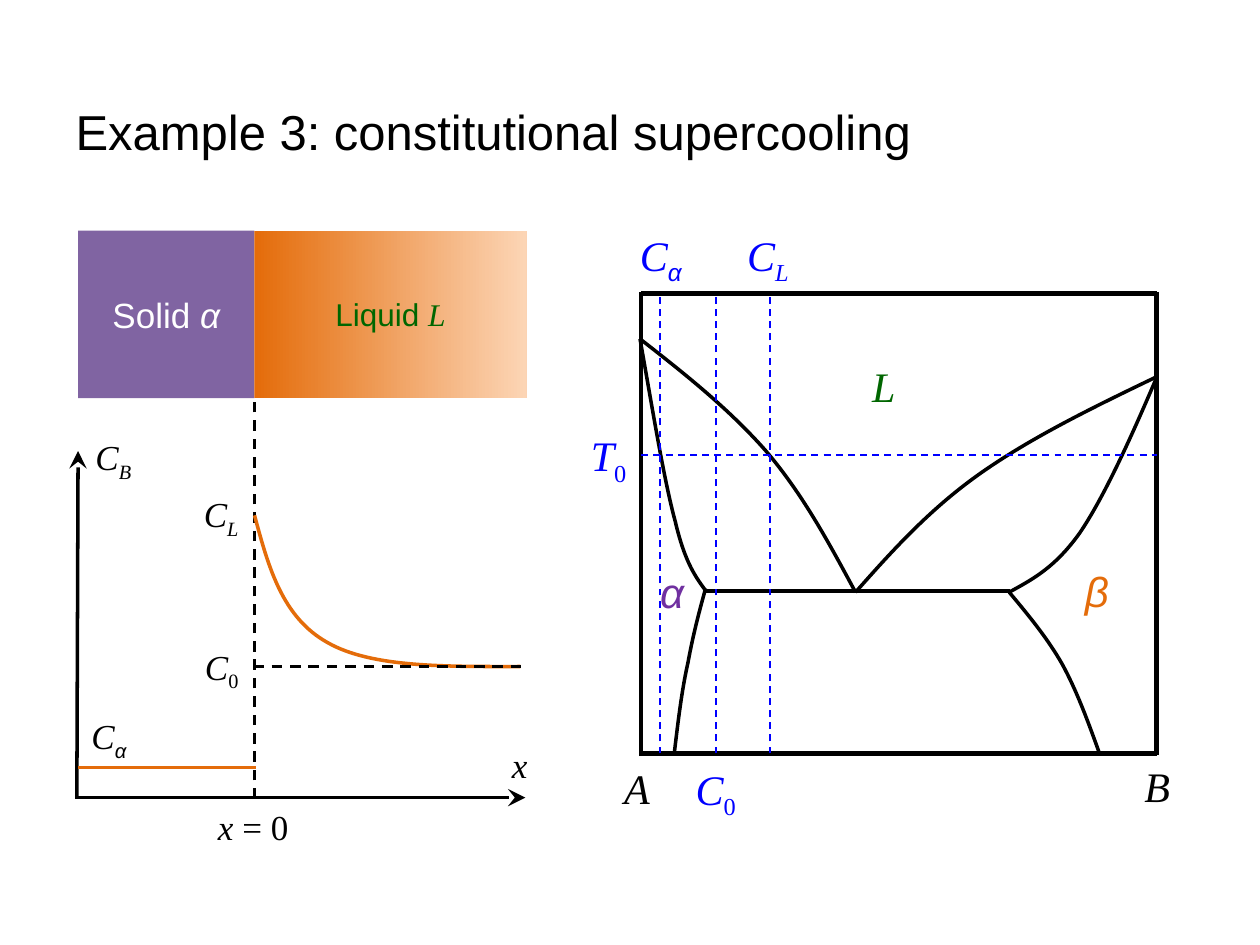
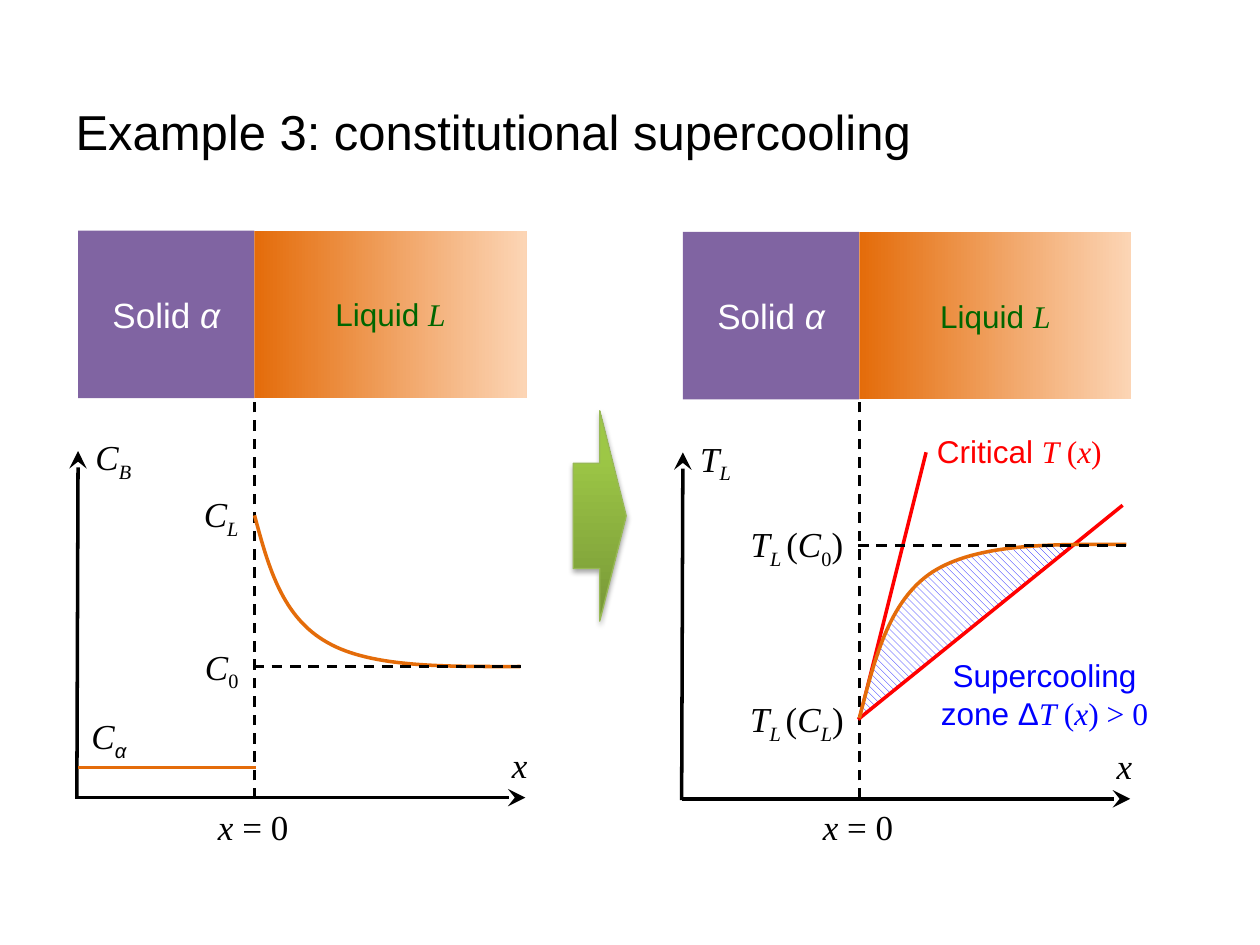
from lxml import etree
from pptx import Presentation
from pptx.dml.color import RGBColor
from pptx.enum.dml import MSO_LINE as Dash, MSO_PATTERN as Hatch
from pptx.enum.shapes import MSO_CONNECTOR as Link, MSO_SHAPE as Kind
from pptx.enum.text import MSO_ANCHOR as Anchor, MSO_AUTO_SIZE as Fit, PP_ALIGN as Align
from pptx.oxml import parse_xml
from pptx.oxml.ns import qn
from pptx.util import Cm, Pt

UNIT = 2.54  # one grid unit in centimetres
SANS, SERIF = "Arial", "Times New Roman"
BLACK, WHITE, BLUE, RED = "000000", "FFFFFF", "0000FF", "FF0000"
ORANGE, PEACH, PURPLE, VIOLET, GREEN = "E46C0A", "FCD5B5", "8064A2", "7030A0", "006600"
TITLE = "Example 3: constitutional supercooling"
SHIFT = 4.8  # from the left panel to the right one
SHADOW = (
    '<a:effectLst xmlns:a="http://schemas.openxmlformats.org/drawingml/2006/main">'
    '<a:outerShdw blurRad="39370" dist="22860" dir="5400000" rotWithShape="0">'
    '<a:srgbClr val="000000"><a:alpha val="35000"/></a:srgbClr>'
    '</a:outerShdw></a:effectLst>')


def rgb(code):
    return RGBColor.from_string(code)


def grid(*vals):
    return [Cm(val * UNIT) for val in vals]


# Text: a run is (text, marks); i = italic, s = subscript, a = sans
def write(frame, runs, size, color, align=Align.CENTER):
    par = frame.paragraphs[0]
    par.alignment = align
    for text, marks in runs:
        run = par.add_run()
        run.text = text
        look = {"name": SANS if "a" in marks else SERIF,
                "size": Pt(size), "italic": "i" in marks}
        for key, val in look.items():
            setattr(run.font, key, val)
        run.font.color.rgb = rgb(color)
        if "s" in marks:
            run._r.get_or_add_rPr().set("baseline", "-25000")


def sub(base, low):
    marks = "s" if low.isdigit() else "isa" if low == "α" else "is"
    return [(base, "i"), (low, marks)]


def label(slide, box, runs, size=20, color=BLACK, wrap=False):
    frame = slide.shapes.add_textbox(*grid(*box)).text_frame
    frame.word_wrap = wrap
    frame.auto_size = Fit.SHAPE_TO_FIT_TEXT
    write(frame, runs, size, color)


# Lines and curves
def pen(line, color, width, dash=False):
    line.color.rgb = rgb(color)
    line.width = Pt(width)
    if dash:
        line.dash_style = Dash.DASH


def rule(slide, ends, color=BLACK, width=2, dash=False, arrow=False):
    link = slide.shapes.add_connector(Link.STRAIGHT, *grid(*ends))
    pen(link.line, color, width, dash)
    if arrow:
        tip = etree.SubElement(link.line._get_or_add_ln(), qn("a:tailEnd"))
        for key, val in {"type": "stealth", "w": "lg", "len": "lg"}.items():
            tip.set(key, val)
    etree.SubElement(link._element.spPr, qn("a:effectLst"))


def trace(slide, knots):
    """Joined cubic curves: a start, then three knots each."""
    first, *rest = [grid(*knot) for knot in knots]
    path = slide.shapes.build_freeform(*first)
    path.add_line_segments(rest, close=False)
    form = path.convert_to_shape()
    form.shadow.inherit = False
    steps = list(form._element.iter(qn("a:lnTo")))
    for k in range(0, len(steps), 3):
        cubic = etree.Element(qn("a:cubicBezTo"))
        steps[k].addprevious(cubic)
        for step in steps[k:k + 3]:
            cubic.append(step[0])
            step.getparent().remove(step)
    return form


def curve(slide, knots, color=BLACK):
    form = trace(slide, knots)
    form.fill.background()
    pen(form.line, color, 2)


# Filled shapes
def blend(fill, start, end, angle, stop=1.0):
    fill.gradient()
    fill.gradient_angle = angle
    for mark, color, pos in zip(fill.gradient_stops, (start, end), (0, stop)):
        mark.color.rgb = rgb(color)
        mark.position = pos


def block(slide, box, runs, size, color):
    rect = slide.shapes.add_shape(Kind.RECTANGLE, *grid(*box))
    rect.shadow.inherit = False
    rect.line.fill.background()
    rect.text_frame.vertical_anchor = Anchor.MIDDLE
    write(rect.text_frame, runs, size, color)
    return rect.fill


# Parts shared by the slides
def begin(deck):
    slide = deck.slides.add_slide(deck.slide_layouts[5])
    head = slide.shapes.title
    head.left, head.top, head.width, head.height = grid(0.5, 0.5, 8.92, 1.08)
    head.text_frame.vertical_anchor = Anchor.MIDDLE
    head.text_frame.auto_size = Fit.NONE
    write(head.text_frame, [(TITLE, "a")], 28, BLACK, Align.LEFT)
    return slide


def panel(slide, name, wide, dx=0, dy=0):
    """Solid and liquid blocks above a pair of axes."""
    left, mid, top, base = 0.62 + dx, 2.02 + dx, 1.83 + dy, 6.33 + dy
    fill = block(slide, (left, top, 1.4, 1.33), [("Solid ", "a"), ("α", "ai")], 20, WHITE)
    fill.solid()
    fill.fore_color.rgb = rgb(PURPLE)
    fill = block(slide, (mid, top, 2.16, 1.33), [("Liquid ", "a"), ("L", "i")], 18, GREEN)
    blend(fill, ORANGE, PEACH, 0)
    rule(slide, (left - 0.01, base + 0.01, left, 3.58 + dy), arrow=True)
    rule(slide, (left - 0.01, base, 4.17 + dx, base), arrow=True)
    rule(slide, (mid, 6.34, mid, 3.17), width=1.5, dash=True)
    label(slide, (3.96 + dx, 5.85 + dy, 0.33, 0.44), [("x", "i")])
    label(slide, (0.65 + dx, 3.41 + dy, wide, 0.44), name)
    label(slide, (1.63 + dx, 6.34, 0.76, 0.44), [("x", "i"), (" = 0", "")])


def profile(slide):
    """Solute content against distance."""
    panel(slide, sub("C", "B"), 0.5)
    rule(slide, (0.62, 6.09, 2.03, 6.09), ORANGE)
    curve(slide, [(2.02, 4.09), (2.13, 4.5), (2.24, 4.9), (2.6, 5.1),
                  (2.95, 5.3), (3.54, 5.29), (4.13, 5.29)], ORANGE)
    rule(slide, (2.01, 5.29, 4.14, 5.29), width=1.5, dash=True)
    for low, x, y, wide in (("α", 0.61, 5.62, 0.51), ("L", 1.51, 3.86, 0.49),
                            ("0", 1.52, 5.07, 0.48)):
        label(slide, (x, y, wide, 0.44), sub("C", low))


def phases(slide):
    """Phase diagram of A and B."""
    left, right, top, base, flat = 5.09, 9.18, 2.33, 5.98, 4.69
    for ends in ((left, base + 0.02, left, top - 0.01), (left, base, right, base),
                 (right, top, left, top), (right, top - 0.01, right, base + 0.01)):
        rule(slide, ends, width=2.5)
    rule(slide, (5.6, flat, 8.02, flat))
    for knots in (
        [(5.61, 4.7), (5.53, 4.59), (5.44, 4.48), (5.36, 4.14),
         (5.27, 3.81), (5.18, 3.25), (5.08, 2.69)],
        [(5.6, 4.67), (5.55, 4.85), (5.5, 5.04), (5.46, 5.26),
         (5.41, 5.48), (5.38, 5.74), (5.35, 5.99)],
        [(8.01, 4.7), (8.19, 4.6), (8.37, 4.51), (8.57, 4.23),
         (8.76, 3.95), (8.97, 3.49), (9.17, 3.02)],
        [(8.01, 4.7), (8.16, 4.88), (8.31, 5.06), (8.43, 5.27),
         (8.55, 5.49), (8.64, 5.74), (8.73, 5.99)],
        [(5.08, 2.69), (5.44, 2.97), (5.79, 3.25), (6.08, 3.58),
         (6.37, 3.92), (6.58, 4.31), (6.79, 4.7)],
        [(9.18, 2.99), (8.68, 3.23), (8.19, 3.47), (7.79, 3.75),
         (7.39, 4.03), (7.09, 4.36), (6.79, 4.7)],
    ):
        curve(slide, knots)
    # Guides and names
    for x in (5.24, 5.68, 6.11):
        rule(slide, (x, base, x, top - 0.01), BLUE, 1, True)
    rule(slide, (left, 3.61, right, 3.61), BLUE, 1, True)
    for runs, x, y, wide, color in (
        ([("A", "i")], 4.85, 6, 0.41, BLACK),
        ([("B", "i")], 8.98, 5.99, 0.41, BLACK),
        ([("L", "i")], 6.82, 2.81, 0.39, GREEN),
        ([("α", "ai")], 5.13, 4.45, 0.41, VIOLET),
        ([("β", "ai")], 8.51, 4.44, 0.39, ORANGE),
        (sub("C", "0"), 5.41, 6.01, 0.54, BLUE),
        (sub("C", "α"), 4.96, 1.77, 0.57, BLUE),
        (sub("C", "L"), 5.82, 1.77, 0.55, BLUE),
        (sub("T", "0"), 4.58, 3.36, 0.5, BLUE),
    ):
        label(slide, (x, y, wide, 0.5), runs, 24, color)


def arrow(slide):
    """Block arrow between the panels."""
    form = slide.shapes.add_shape(Kind.RIGHT_ARROW, *grid(4.55, 3.26, 0.42, 1.67))
    blend(form.fill, "779737", "9DC746", 90, 0.8)
    pen(form.line, "98B955", 0.75)
    form._element.spPr.append(parse_xml(SHADOW))


def cooling(slide):
    """Liquidus temperature against distance."""
    panel(slide, sub("T", "L"), 0.46, SHIFT, 0.01)
    for low, y in (("0", 4.1), ("L", 5.49)):
        runs = sub("T", "L ") + [("(", "")] + sub("C", low) + [(")", "")]
        label(slide, (5.84, y, 0.97, 0.44), runs)
    temp = [("T ", "i"), ("(", ""), ("x", "i")]
    rule(slide, (6.82, 5.71, 7.35, 3.59), RED)
    label(slide, (7.27, 3.38, 1.64, 0.4),
          [("Critical ", "a"), *temp, (")", "")], 18, RED, True)
    zone = trace(slide, [
        (6.83, 5.71), (6.88, 5.51), (6.92, 5.3), (6.99, 5.13),
        (7.06, 4.96), (7.14, 4.81), (7.25, 4.69), (7.35, 4.58),
        (7.46, 4.51), (7.62, 4.45), (7.78, 4.39), (8.06, 4.36),
        (8.21, 4.34), (8.35, 4.33), (8.43, 4.33), (8.51, 4.34)])
    zone.line.fill.background()
    zone.fill.patterned()
    zone.fill.pattern = Hatch.WIDE_DOWNWARD_DIAGONAL
    zone.fill.fore_color.rgb = rgb(BLUE)
    zone.fill.back_color.rgb = rgb(WHITE)
    rule(slide, (6.81, 5.71, 8.91, 4.01), RED)
    label(slide, (7.34, 5.16, 1.9, 0.71),
          [("Supercooling zone Δ", "a"), *temp, (") > 0", "")], 18, BLUE, True)
    curve(slide, [(6.82, 5.7), (6.94, 5.24), (7.05, 4.77), (7.4, 4.54),
                  (7.76, 4.31), (8.35, 4.32), (8.94, 4.32)], ORANGE)
    rule(slide, (6.81, 4.33, 8.94, 4.33), width=1.5, dash=True)


def main():
    deck = Presentation()
    deck.slide_width, deck.slide_height = grid(10, 7.5)
    for parts in ((phases, profile), (profile, arrow, cooling)):
        slide = begin(deck)
        for part in parts:
            part(slide)
    deck.save("out.pptx")


if __name__ == "__main__":
    main()
